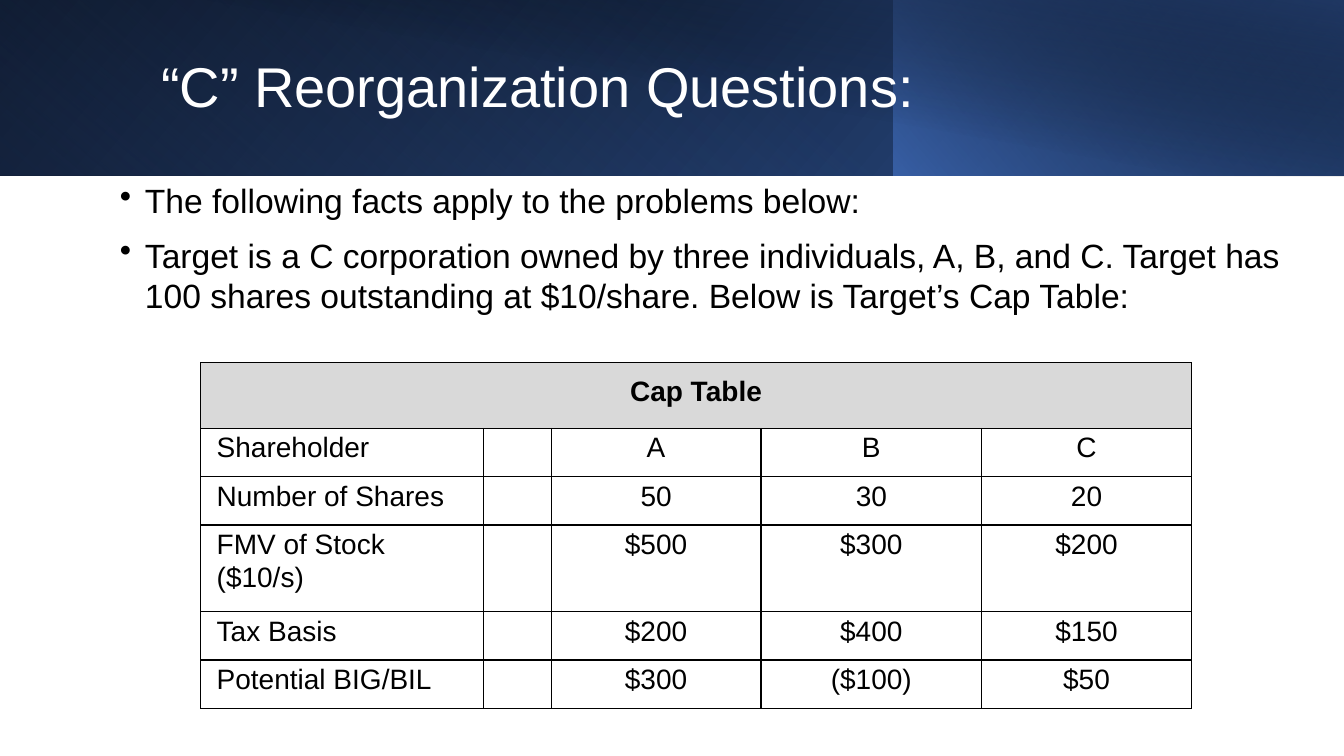
from pptx import Presentation
from pptx.dml.color import RGBColor
from pptx.enum.shapes import MSO_SHAPE as Preset
from pptx.enum.text import MSO_ANCHOR as Anchor, PP_ALIGN as Align
from pptx.oxml import parse_xml
from pptx.oxml.ns import nsdecls, qn
from pptx.oxml.xmlchemy import OxmlElement
from pptx.util import Pt

BLACK = RGBColor(0x00, 0x00, 0x00)
WHITE = RGBColor(0xFF, 0xFF, 0xFF)
BLUE = RGBColor(0x44, 0x72, 0xC4)
MID_BLUE = RGBColor(0x2F, 0x55, 0x97)
NAVY = RGBColor(0x20, 0x38, 0x64)
GRAY = RGBColor(0xD9, 0xD9, 0xD9)


def write(paragraph, text, size=20, color=BLACK, bold=False,
          align=Align.LEFT, spacing=1.0, before=0, bullet=None):
    run = paragraph.add_run()
    run.text = text
    run.font.name = "Arial"
    run.font.size = Pt(size)
    run.font.bold = bold
    run.font.color.rgb = color
    paragraph.alignment = align
    paragraph.line_spacing = spacing
    paragraph.space_before = Pt(before)
    if bullet:
        properties = paragraph._p.get_or_add_pPr()
        properties.set("marL", str(Pt(18)))
        properties.set("indent", str(-Pt(18)))
        mark = OxmlElement("a:buChar")
        mark.set("char", bullet)
        properties.append(mark)


presentation = Presentation()
presentation.slide_width = Pt(960)
presentation.slide_height = Pt(540)
slide = presentation.slides.add_slide(presentation.slide_layouts[6])

# left, width, height, angle, stops of (position, color, opacity)
banner_layers = [
    (0, 960, 125.3, 320, [(0, BLACK, 100), (1, MID_BLUE, 100)]),
    (0, 639.4, 125.3, 230, [(0.2, BLUE, 0), (1, NAVY, 55)]),
    (638.6, 321.4, 125.3, 40, [(0, BLUE, 66), (1, BLACK, 30)]),
    (36, 924, 126, 80, [(0.5, BLACK, 0), (0.99, NAVY, 52)]),
]
for left, width, height, angle, stops in banner_layers:
    shape = slide.shapes.add_shape(Preset.RECTANGLE, Pt(left), 0, Pt(width), Pt(height))
    shape.shadow.inherit = False
    shape.line.fill.background()
    shape.fill.gradient()
    shape.fill.gradient_angle = angle
    for stop, (position, color, opacity) in zip(shape.fill.gradient_stops, stops):
        stop.position = position
        stop.color.rgb = color
    for element, (position, color, opacity) in zip(shape._element.spPr.iter(qn("a:srgbClr")), stops):
        alpha = OxmlElement("a:alpha")
        alpha.set("val", str(opacity * 1000))
        element.append(alpha)

title = slide.shapes.add_textbox(Pt(108), Pt(23), Pt(779), Pt(81.4)).text_frame
title.word_wrap = True
title.vertical_anchor = Anchor.MIDDLE
write(title.paragraphs[0], "“C” Reorganization Questions:", size=40, color=WHITE, spacing=0.9)

facts = [
    "The following facts apply to the problems below:",
    "Target is a C corporation owned by three individuals, A, B, and C. Target has "
    "100 shares outstanding at $10/share. Below is Target’s Cap Table:",
]
body = slide.shapes.add_textbox(Pt(78.5), Pt(125.3), Pt(845.3), Pt(165.6)).text_frame
body.word_wrap = True
for index, fact in enumerate(facts):
    paragraph = body.add_paragraph() if index else body.paragraphs[0]
    write(paragraph, fact, size=24, before=10, bullet="•")

cap_rows = [
    ["Cap Table", "", "", "", ""],
    ["Shareholder", "", "A", "B", "C"],
    ["Number of Shares", "", "50", "30", "20"],
    ["FMV of Stock ($10/s)", "", "$500", "$300", "$200"],
    ["Tax Basis", "", "$200", "$400", "$150"],
    ["Potential BIG/BIL", "", "$300", "($100)", "$50"],
]
column_widths = [202.3, 48.2, 149.8, 157.7, 149.8]
row_heights = [47, 34.5, 34.5, 62, 34.5, 34.5]
table = slide.shapes.add_table(
    len(cap_rows), len(column_widths), Pt(143.3), Pt(259),
    Pt(sum(column_widths)), Pt(sum(row_heights))).table
table.first_row = False
table.horz_banding = False
for column, width in zip(table.columns, column_widths):
    column.width = Pt(width)
for row, height in zip(table.rows, row_heights):
    row.height = Pt(height)
table.cell(0, 0).merge(table.cell(0, 4))

for row_index, values in enumerate(cap_rows):
    header = row_index == 0
    for column_index, value in enumerate(values):
        cell = table.cell(row_index, column_index)
        if header:
            cell.fill.solid()
            cell.fill.fore_color.rgb = GRAY
        else:
            cell.fill.background()
        for index, side in enumerate(("lnL", "lnR", "lnT", "lnB")):
            cell._tc.get_or_add_tcPr().insert(index, parse_xml(
                f'<a:{side} {nsdecls("a")} w="{Pt(1)}"><a:solidFill>'
                f'<a:srgbClr val="{BLACK}"/></a:solidFill></a:{side}>'))
        if value:
            cell.margin_left = cell.margin_right = Pt(15.8 if header else 11.5)
            cell.margin_top = Pt(7.9 if header else 1.4)
            cell.margin_bottom = Pt(7.9 if header else 0)
            centered = header or column_index > 0
            write(cell.text_frame.paragraphs[0], value, bold=header, spacing=1.07,
                  align=Align.CENTER if centered else Align.LEFT)

presentation.save("out.pptx")
